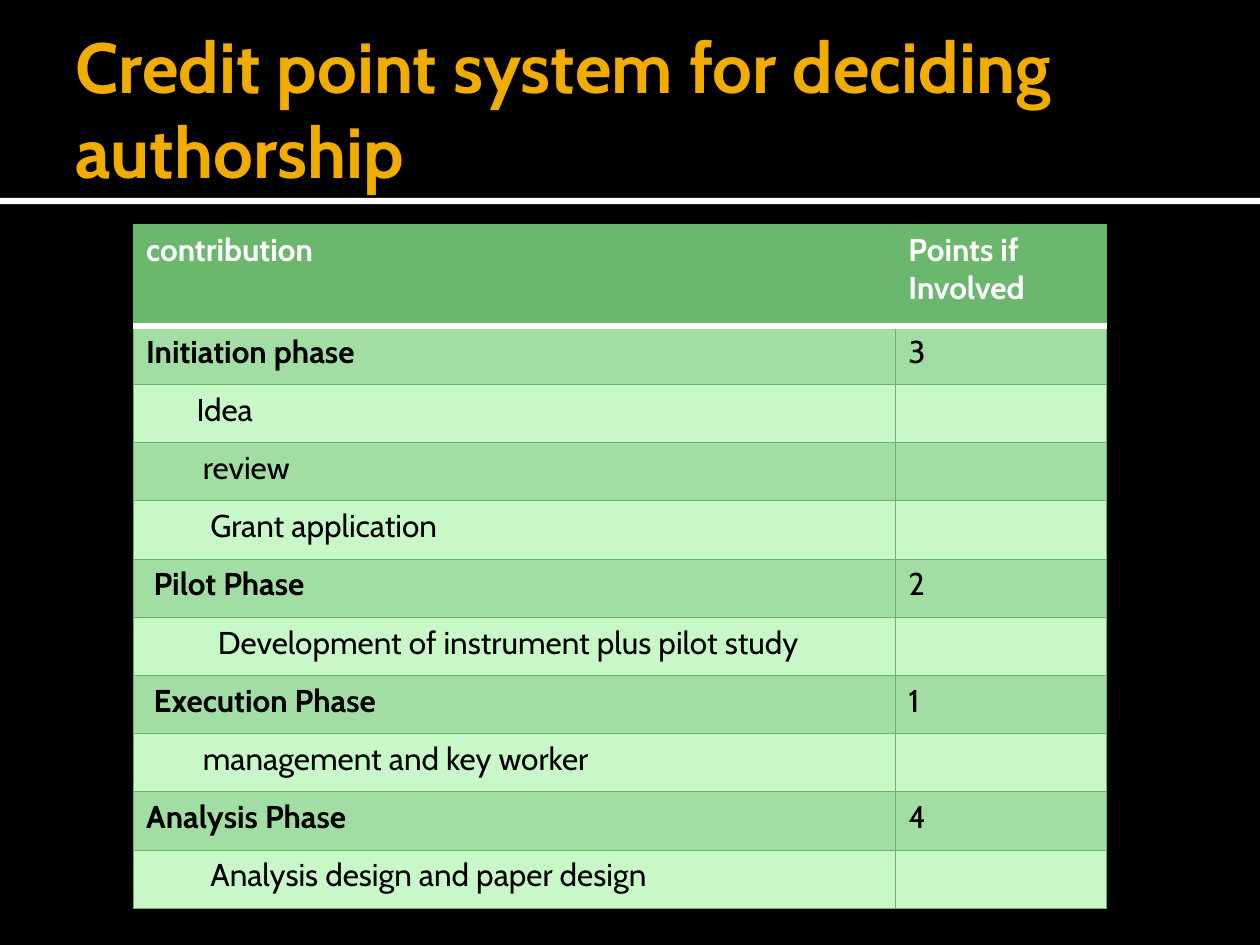
import pptx
import pptx.util
import pptx.dml.color
import pptx.enum.shapes
import pptx.enum.text
import lxml.etree

Inches = pptx.util.Inches
Pt = pptx.util.Pt
RGBColor = pptx.dml.color.RGBColor

BLACK = RGBColor(0x00, 0x00, 0x00)
WHITE = RGBColor(0xFF, 0xFF, 0xFF)
GOLD = RGBColor(0xF0, 0xAD, 0x00)
GREEN = RGBColor(0x6B, 0xB7, 0x6D)
BAND = RGBColor(0xA2, 0xDE, 0xA4)
LIGHT = RGBColor(0xC8, 0xF7, 0xC8)
EDGE = RGBColor(0x67, 0xB5, 0x69)
FONT = "Cabin"


def style(par, size, color, bold):
    par.font.name = FONT
    par.font.size = Pt(size)
    par.font.color.rgb = color
    par.font.bold = bold


def border(cell, sides):
    props = cell._tc.get_or_add_tcPr()
    space = "{http://schemas.openxmlformats.org/drawingml/2006/main}"
    for spot, (side, color, width) in enumerate(sides):
        line = lxml.etree.Element(space + "ln" + side, w=str(Pt(width)))
        fill = lxml.etree.SubElement(line, space + "solidFill")
        lxml.etree.SubElement(fill, space + "srgbClr", val=str(color))
        props.insert(spot, line)


deck = pptx.Presentation()
deck.slide_width = Inches(10)
deck.slide_height = Inches(7.5)
slide = deck.slides.add_slide(deck.slide_layouts[5])
slide.background.fill.solid()
slide.background.fill.fore_color.rgb = BLACK

rule = slide.shapes.add_shape(
    pptx.enum.shapes.MSO_SHAPE.RECTANGLE,
    Inches(0), Inches(1.57), Inches(10), Inches(0.05))
rule.shadow.inherit = False
rule.fill.solid()
rule.fill.fore_color.rgb = WHITE
rule.line.fill.background()

title = slide.shapes.title
title.left, title.top = Inches(0.5), Inches(0.17)
title.width, title.height = Inches(9), Inches(1.37)
frame = title.text_frame
frame.text = "Credit point system for deciding authorship"
frame.word_wrap = True
frame.auto_size = pptx.enum.text.MSO_AUTO_SIZE.NONE
frame.vertical_anchor = pptx.enum.text.MSO_ANCHOR.MIDDLE
frame.margin_left = Inches(0.1)
frame.margin_right = frame.margin_top = frame.margin_bottom = Inches(0.05)
frame.paragraphs[0].alignment = pptx.enum.text.PP_ALIGN.LEFT
style(frame.paragraphs[0], 40.5, GOLD, True)

rows = [
    ("contribution", "Points if Involved", 0.1),
    ("Initiation phase", "3", 0.1),
    ("Idea", "", 0.5),
    ("review", "", 0.55),
    ("Grant application", "", 0.61),
    ("Pilot Phase", "2", 0.16),
    ("Development of instrument plus pilot study", "", 0.67),
    ("Execution Phase", "1", 0.16),
    ("management and key worker", "", 0.55),
    ("Analysis Phase", "4", 0.1),
    ("Analysis design and paper design", "", 0.61),
]
table = slide.shapes.add_table(
    len(rows), 2, Inches(1.06), Inches(1.78), Inches(7.72), Inches(5.43)).table
table.columns[0].width = Inches(6.05)
table.columns[1].width = Inches(1.67)

for r, (label, points, indent) in enumerate(rows):
    head = r == 0
    table.rows[r].height = Inches(0.81 if head else 0.462)
    for c, text in enumerate((label, points)):
        cell = table.cell(r, c)
        cell.text = text
        cell.margin_left = Inches(0.1 if c else indent)
        cell.fill.solid()
        cell.fill.fore_color.rgb = GREEN if head else BAND if r % 2 else LIGHT
        bold = head or (c == 0 and points != "")
        style(cell.text_frame.paragraphs[0], 18, WHITE if head else BLACK, bold)
        border(cell, [
            ("L", EDGE, 0.5),
            ("R", EDGE, 0.5),
            ("T", WHITE, 3.78) if r == 1 else ("T", EDGE, 0.5),
            ("B", WHITE, 3.78) if head else ("B", EDGE, 0.5),
        ])

deck.save("out.pptx")
